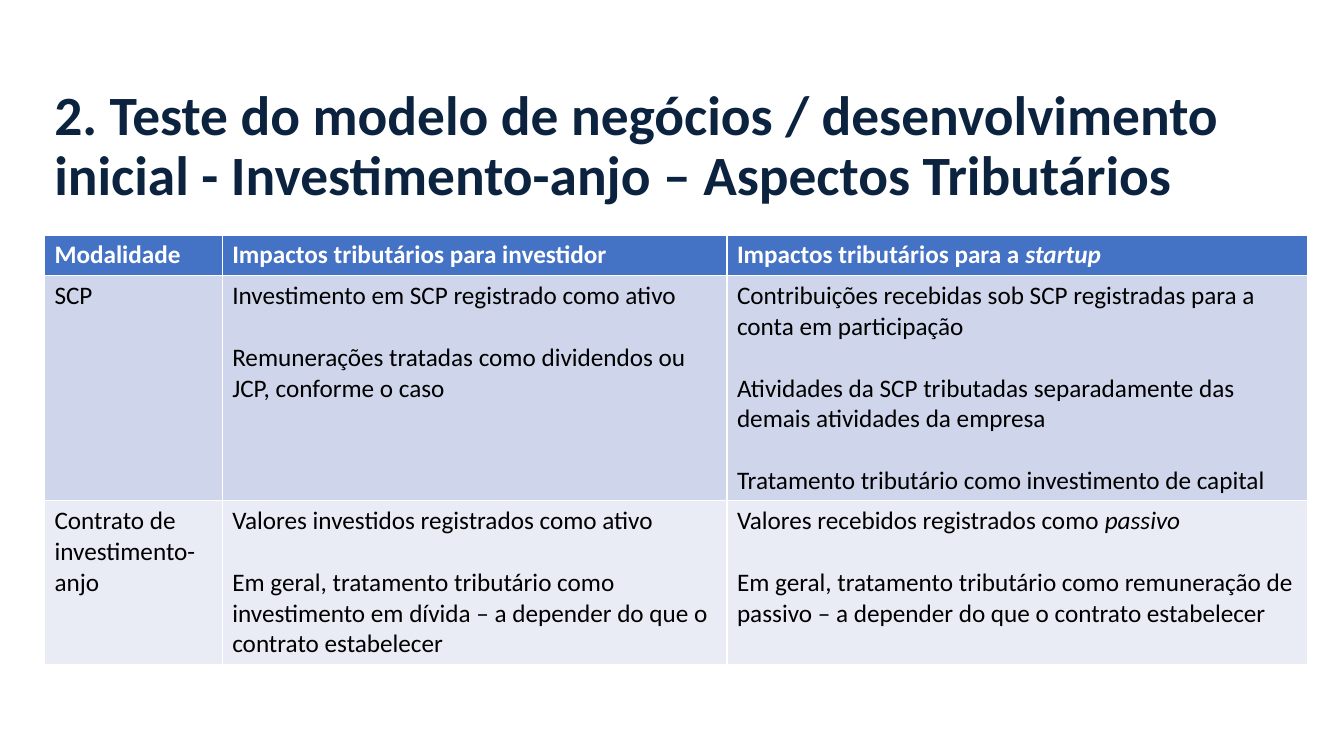
from pptx import Presentation
from pptx.dml.color import RGBColor
from pptx.enum.text import MSO_ANCHOR
from pptx.util import Cm, Pt

MIDDLE = MSO_ANCHOR.MIDDLE

HEX = {
    "navy": "0B233F",
    "white": "FFFFFF",
    "black": "000000",
    "head": "4472C4",
    "dark": "CFD5EA",
    "light": "E9EBF5",
}
TITLE = {"name": "Calibri", "size": Pt(39.6), "bold": True}
HEAD = {"name": "Calibri", "size": Pt(18), "bold": True}
BODY = {"name": "Calibri", "size": Pt(18), "bold": False}

LEFT, WIDTH = Cm(1.12), Cm(31.82)
COLS = [4.48, 12.72, 14.62]
GAP = Pt(22)

# Each row: height in cm, fill, text colour, font format, cells
# Each cell is a list of paragraphs; *stars* enclose italics
ROWS = [
    (1.03, "head", "white", HEAD, [
        ["Modalidade"],
        ["Impactos tributários para investidor"],
        ["Impactos tributários para a *startup*"],
    ]),
    (5.67, "dark", "black", BODY, [
        ["SCP"],
        ["Investimento em SCP registrado como ativo",
         "Remunerações tratadas como dividendos ou JCP, conforme o caso"],
        ["Contribuições recebidas sob SCP registradas para a conta em participação",
         "Atividades da SCP tributadas separadamente das demais atividades da empresa",
         "Tratamento tributário como investimento de capital"],
    ]),
    (4.12, "light", "black", BODY, [
        ["Contrato de investimento-anjo"],
        ["Valores investidos registrados como ativo",
         "Em geral, tratamento tributário como investimento em dívida – "
         "a depender do que o contrato estabelecer"],
        ["Valores recebidos registrados como *passivo*",
         "Em geral, tratamento tributário como remuneração de passivo – "
         "a depender do que o contrato estabelecer"],
    ]),
]


def write(para, text, form, color):
    """Add runs to a paragraph, with text between stars in italics."""
    for i, part in enumerate(text.split("*")):
        if part:
            run = para.add_run()
            run.text = part
            for key, value in form.items():
                setattr(run.font, key, value)
            run.font.italic = i % 2 == 1
            run.font.color.rgb = RGBColor.from_string(HEX[color])


deck = Presentation()
deck.slide_width, deck.slide_height = Cm(33.87), Cm(19.05)
slide = deck.slides.add_slide(deck.slide_layouts[6])

# Title
frame = slide.shapes.add_textbox(LEFT, Cm(2.36), WIDTH, Cm(2.72)).text_frame
frame.word_wrap = True
frame.vertical_anchor = MIDDLE
para = frame.paragraphs[0]
para.line_spacing = 0.9
write(para, "2. Teste do modelo de negócios / desenvolvimento inicial - "
      "Investimento-anjo – Aspectos Tributários", TITLE, "navy")

# Table of tax impacts
high = Cm(sum(row[0] for row in ROWS))
table = slide.shapes.add_table(len(ROWS), len(COLS), LEFT, Cm(5.92), WIDTH, high).table
for col, width in zip(table.columns, COLS):
    col.width = Cm(width)

for r, (height, fill, color, form, cells) in enumerate(ROWS):
    table.rows[r].height = Cm(height)
    for c, texts in enumerate(cells):
        cell = table.cell(r, c)
        cell.fill.solid()
        cell.fill.fore_color.rgb = RGBColor.from_string(HEX[fill])
        frame = cell.text_frame
        for n, text in enumerate(texts):
            para = frame.add_paragraph() if n else frame.paragraphs[0]
            if n:
                para.space_before = GAP
            write(para, text, form, color)

deck.save("out.pptx")
